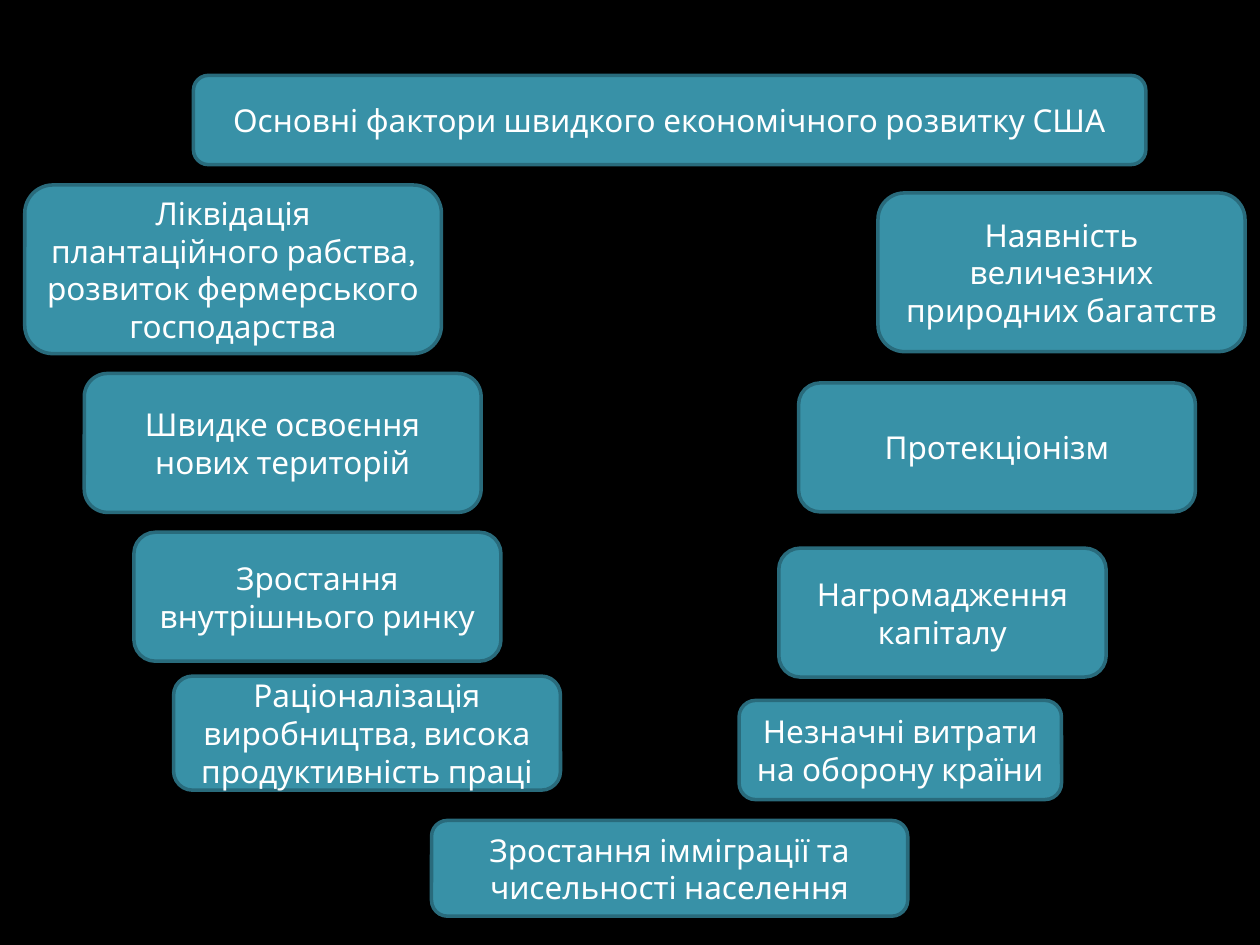
import pptx
import pptx.dml.color
import pptx.enum.shapes
import pptx.enum.text
import pptx.util

Cm = pptx.util.Cm
FILL, OUTLINE, WHITE, BLACK = "3891A7", "296B7C", "FFFFFF", "000000"
TEXT_FORMAT = {"name": "Karla", "size": pptx.util.Pt(18)}

TITLE = "Основні фактори швидкого економічного розвитку США"
CONCLUSION = "Зростання імміграції та чисельності населення"

# Each factor: left and top within its column, width, height, wording (cm)
LEFT_FACTORS = [
    (0, 0, 8.4, 3.4, "Ліквідація плантаційного рабства, розвиток фермерського господарства"),
    (1.2, 3.8, 8, 2.8, "Швидке освоєння нових територій"),
    (2.2, 7, 7.4, 2.6, "Зростання внутрішнього ринку"),
    (3, 9.9, 7.8, 2.3, "Раціоналізація виробництва, висока продуктивність праці"),
]
RIGHT_FACTORS = [
    (2.8, 0, 7.4, 3.2, "Наявність величезних природних багатств"),
    (1.2, 3.83, 8, 2.6, "Протекціонізм"),
    (0.8, 7.16, 6.6, 2.6, "Нагромадження капіталу"),
    (0, 10.23, 6.5, 2, "Незначні витрати на оборону країни"),
]


def paint(color_format, hex_string):
    color_format.rgb = pptx.dml.color.RGBColor.from_string(hex_string)


def add_card(page, left, top, width, height, text):
    card = page.shapes.add_shape(
        pptx.enum.shapes.MSO_SHAPE.ROUNDED_RECTANGLE,
        Cm(left), Cm(top), Cm(width), Cm(height))
    card.shadow.inherit = False
    card.fill.solid()
    paint(card.fill.fore_color, FILL)
    paint(card.line.color, OUTLINE)
    card.line.width = pptx.util.Pt(2)

    frame = card.text_frame
    frame.word_wrap = True
    frame.vertical_anchor = pptx.enum.text.MSO_ANCHOR.MIDDLE
    para = frame.paragraphs[0]
    para.alignment = pptx.enum.text.PP_ALIGN.CENTER
    span = para.add_run()
    span.text = text
    for attribute, value in TEXT_FORMAT.items():
        setattr(span.font, attribute, value)
    paint(span.font.color, WHITE)


def add_column(page, left, top, factors):
    """Place the stepped cards of one column from its top-left corner."""
    for offset_x, offset_y, width, height, text in factors:
        add_card(page, left + offset_x, top + offset_y, width, height, text)


def main():
    deck = pptx.Presentation()
    deck.slide_width, deck.slide_height = Cm(25.4), Cm(19.05)
    page = deck.slides.add_slide(deck.slide_layouts[6])
    page.background.fill.solid()
    paint(page.background.fill.fore_color, BLACK)

    add_card(page, 3.9, 1.52, 19.2, 1.8, TITLE)
    add_column(page, 0.5, 3.73, LEFT_FACTORS)
    add_column(page, 14.9, 3.89, RIGHT_FACTORS)
    add_card(page, 8.7, 16.54, 9.6, 1.93, CONCLUSION)
    deck.save("out.pptx")


if __name__ == "__main__":
    main()
